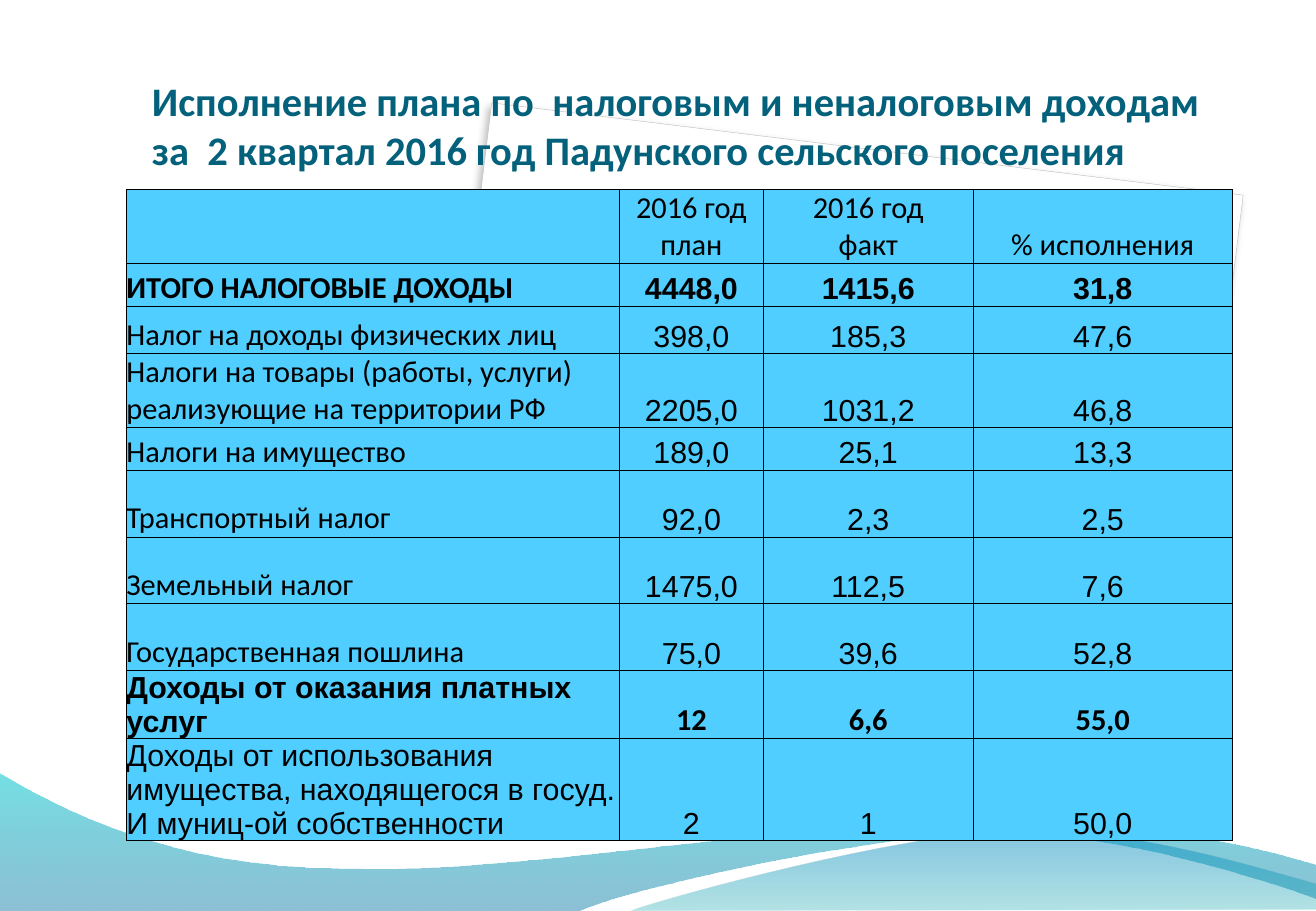
from lxml.etree import SubElement
from pptx import Presentation
from pptx.dml.color import RGBColor
from pptx.enum.shapes import MSO_SHAPE as Preset
from pptx.enum.text import MSO_ANCHOR as Anchor, MSO_AUTO_SIZE as AutoSize, PP_ALIGN as Align
from pptx.oxml.ns import qn
from pptx.util import Pt

PX = 9144
COLORS = {
    "paper": "FFFFFF", "paper_line": "C0C0C0", "black": "000000",
    "title": "04617B", "cell": "4FCEFF",
    "deep_blue": "0074A1", "cyan": "00C6CF", "teal": "00A1A9", "blue": "008BBF",
}
TITLE = ("Исполнение плана по  налоговым и неналоговым доходам "
         "за  2 квартал 2016 год Падунского сельского поселения")
COLUMNS = (406, 118, 173, 213)
ROWS = (
    (61, "Calibri", "Calibri", False, ("", "2016 год план", "2016 год\nфакт", "% исполнения")),
    (35, "Calibri", "Arial", True, ("ИТОГО НАЛОГОВЫЕ ДОХОДЫ", "4448,0", "1415,6", "31,8")),
    (39, "Calibri", "Arial", False, ("Налог на доходы физических лиц", "398,0", "185,3", "47,6")),
    (61, "Calibri", "Arial", False,
     ("Налоги на товары (работы, услуги) реализующие на территории РФ", "2205,0", "1031,2", "46,8")),
    (35, "Calibri", "Arial", False, ("Налоги на имущество", "189,0", "25,1", "13,3")),
    (55, "Calibri", "Arial", False, ("Транспортный налог", "92,0", "2,3", "2,5")),
    (55, "Calibri", "Arial", False, ("Земельный налог", "1475,0", "112,5", "7,6")),
    (55, "Calibri", "Arial", False, ("Государственная пошлина", "75,0", "39,6", "52,8")),
    (56, "Arial", "Calibri", True, ("Доходы от оказания платных услуг", "12", "6,6", "55,0")),
    (84, "Arial", "Arial", False,
     ("Доходы от использования имущества, находящегося в госуд. И муниц-ой собственности",
      "2", "1", "50,0")),
)
LEFT_WAVE = (
    [(1, 114)],
    [(478, 114)],
    [(516, 96), (720, 50), (823, 50)],
    [(925, 50), (1039, 88), (1084, 104)],
    [(1086, 77)],
    [(1066, 69), (943, 37), (809, 38)],
    [(675, 38), (415, 85), (280, 79)],
    [(141, 78), (51, 30), (0, 0)],
)
RIGHT_WAVE = (
    [(0, 70)],
    [(33, 58), (220, 7), (314, 4)],
    [(408, 0), (523, 37), (564, 48)],
    [(564, 69)],
)


def color(name):
    return RGBColor.from_string(COLORS[name])


def scaled(*lengths):
    return [round(length * PX) for length in lengths]


def curve_points(start, first, second, end, steps=16):
    for step in range(1, steps + 1):
        t = step / steps
        weights = ((1 - t) ** 3, 3 * t * (1 - t) ** 2, 3 * t * t * (1 - t), t ** 3)
        yield tuple(sum(weight * point[axis] for weight, point in
                        zip(weights, (start, first, second, end))) for axis in (0, 1))


def add_paper(slide, box):
    paper = slide.shapes.add_shape(Preset.SNIP_ROUND_RECTANGLE, *scaled(*box))
    paper.adjustments[0] = 0
    paper.adjustments[1] = 0.036
    paper.rotation = 7
    paper.element.spPr.xfrm.set("flipV", "1")
    paper.fill.solid()
    paper.fill.fore_color.rgb = color("paper")
    paper.line.color.rgb = color("paper_line")
    paper.line.width = Pt(0.25)
    paper.shadow.inherit = False
    effects = paper.element.spPr.find(qn("a:effectLst"))
    shadow = SubElement(effects, qn("a:outerShdw"), blurRad=str(Pt(5)), dist=str(Pt(3)),
                        dir=str(125 * 60000), algn="tl", rotWithShape="0")
    shade = SubElement(shadow, qn("a:srgbClr"), val=COLORS["black"])
    SubElement(shade, qn("a:alpha"), val="25000")


def add_wave(slide, origin, outline, stops):
    points = list(outline[0])
    for segment in outline[1:]:
        points += segment if len(segment) == 1 else curve_points(points[-1], *segment)
    vertices = [scaled(*point) for point in points]
    builder = slide.shapes.build_freeform(*vertices[0], scale=1)
    builder.add_line_segments(vertices[1:], close=True)
    wave = builder.convert_to_shape(*scaled(*origin))
    wave.shadow.inherit = False
    wave.line.fill.background()
    wave.fill.gradient()
    wave.fill.gradient_angle = 90
    for stop, (position, name, opacity) in zip(wave.fill.gradient_stops, stops):
        stop.position = position
        stop.color.rgb = color(name)
    for element, (position, name, opacity) in zip(wave.element.iter(qn("a:srgbClr")), stops):
        SubElement(element, qn("a:alpha"), val=str(opacity * 1000))


def add_title(slide, box):
    title = slide.shapes.title
    slide.shapes.element.append(title.element)
    title.left, title.top, title.width, title.height = scaled(*box)
    frame = title.text_frame
    frame.text = TITLE
    frame.word_wrap = True
    frame.auto_size = AutoSize.NONE
    frame.vertical_anchor = Anchor.BOTTOM
    frame.margin_left = frame.margin_right = frame.margin_top = frame.margin_bottom = 5 * PX
    paragraph = frame.paragraphs[0]
    paragraph.alignment = Align.LEFT
    paragraph.font.name = "Calibri"
    paragraph.font.size = Pt(24)
    paragraph.font.bold = True
    paragraph.font.color.rgb = color("title")


def format_cell(cell, text, font_name, bold, alignment):
    properties = cell._tc.get_or_add_tcPr()
    for side in ("lnL", "lnR", "lnT", "lnB"):
        border = SubElement(properties, qn(f"a:{side}"), w=str(Pt(0.5)))
        fill = SubElement(border, qn("a:solidFill"))
        SubElement(fill, qn("a:srgbClr"), val=COLORS["black"])
    cell.fill.solid()
    cell.fill.fore_color.rgb = color("cell")
    cell.margin_left = cell.margin_right = cell.margin_top = cell.margin_bottom = 0
    cell.vertical_anchor = Anchor.BOTTOM
    cell.text = text
    for paragraph in cell.text_frame.paragraphs:
        paragraph.alignment = alignment
        paragraph.font.name = font_name
        paragraph.font.size = Pt(18)
        paragraph.font.bold = bold
        paragraph.font.color.rgb = color("black")


def add_income_table(slide, left, top):
    box = (left, top, sum(COLUMNS), sum(row[0] for row in ROWS))
    table = slide.shapes.add_table(len(ROWS), len(COLUMNS), *scaled(*box)).table
    table.first_row = table.horz_banding = False
    for column, width in zip(table.columns, COLUMNS):
        column.width = width * PX
    for row, (height, label_font, value_font, bold, texts) in zip(table.rows, ROWS):
        row.height = height * PX
        for index, (cell, text) in enumerate(zip(row.cells, texts)):
            font_name = value_font if index else label_font
            format_cell(cell, text, font_name, bold, Align.CENTER if index else Align.LEFT)


def main():
    presentation = Presentation()
    presentation.slide_width, presentation.slide_height = scaled(1083, 750)
    slide = presentation.slides.add_slide(presentation.slide_layouts[5])
    add_paper(slide, (375, 121, 623, 450))
    add_wave(slide, (-1, 636), LEFT_WAVE, ((0, "deep_blue", 45), (1, "cyan", 55)))
    add_wave(slide, (519, 680), RIGHT_WAVE, ((0, "teal", 30), (0.8, "blue", 45)))
    add_title(slide, (120, 0, 909, 148))
    add_income_table(slide, 104, 156)
    presentation.save("out.pptx")


if __name__ == "__main__":
    main()
